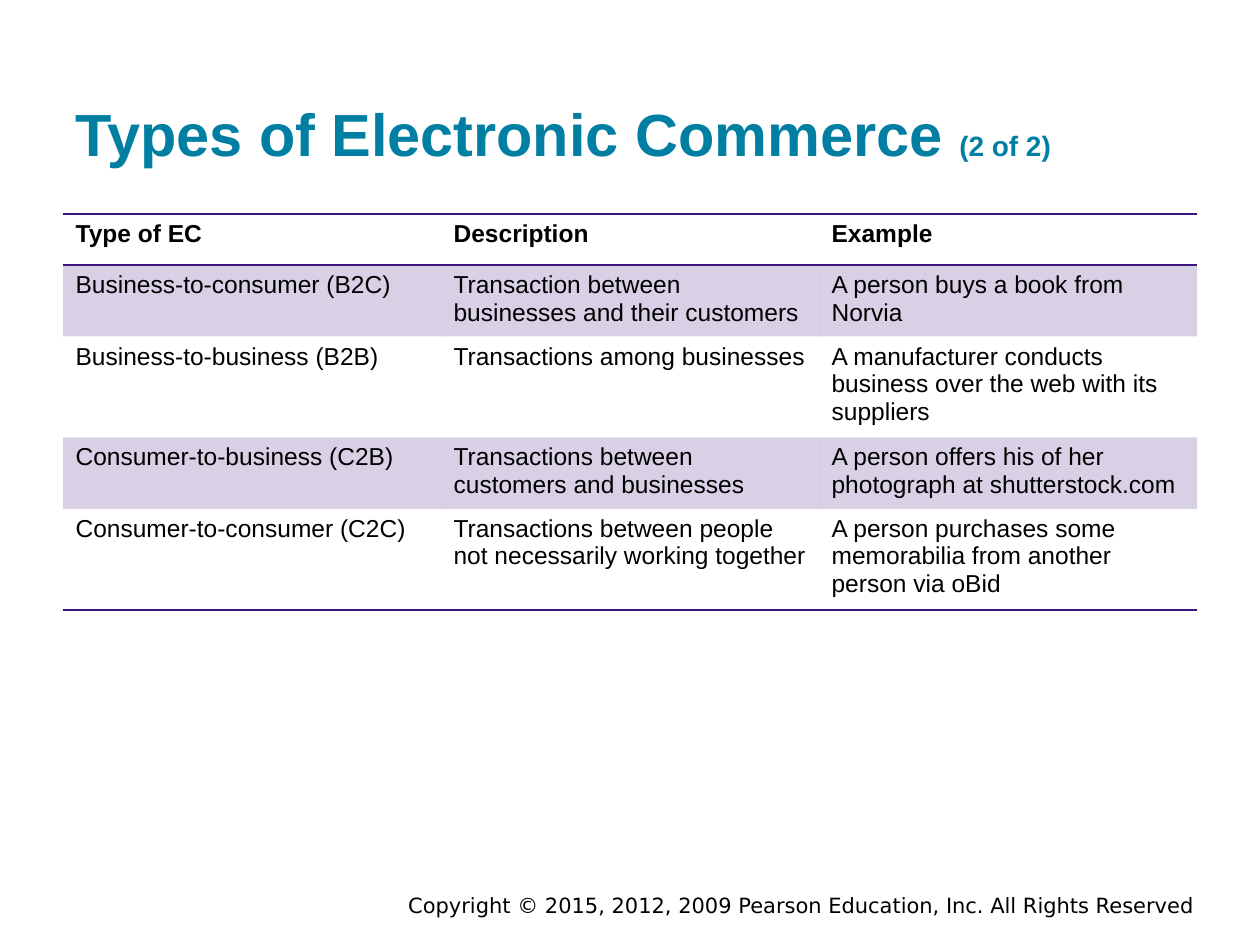
import pptx
import pptx.dml.color
import pptx.enum.text
import pptx.oxml
import pptx.oxml.ns
import pptx.util

RGBColor = pptx.dml.color.RGBColor
TEAL = RGBColor(0x00, 0x7F, 0xA3)
PURPLE = RGBColor(0x3C, 0x15, 0x81)
BLACK = RGBColor(0x00, 0x00, 0x00)

ALIGN = pptx.enum.text.PP_ALIGN
ANCHOR = pptx.enum.text.MSO_ANCHOR
NO_GRID_STYLE = "{2D5ABB26-0587-4C30-8999-92F81FD0307C}"

ROWS = [
    ("Type of EC", "Description", "Example"),
    ("Business-to-consumer (B2C)",
     "Transaction between businesses and their customers",
     "A person buys a book from Norvia"),
    ("Business-to-business (B2B)",
     "Transactions among businesses",
     "A manufacturer conducts business over the web with its suppliers"),
    ("Consumer-to-business (C2B)",
     "Transactions between customers and businesses",
     "A person offers his of her photograph at shutterstock.com"),
    ("Consumer-to-consumer (C2C)",
     "Transactions between people not necessarily working together",
     "A person purchases some memorabilia from another person via oBid"),
]
ROW_HEIGHTS = [51, 68, 95, 68, 95]


def px(length):
    return pptx.util.Emu(round(length * 914400 / 126))


class SlideBuilder:
    body_font = "Arial"
    footer_font = "DejaVu Sans"

    def __init__(self, slide):
        self.slide = slide

    def style(self, font, name, size, color, bold=False):
        font.name = name
        font.size = pptx.util.Pt(size)
        font.bold = bold
        font.color.rgb = color

    def text_box(self, left, top, width, height):
        box = self.slide.shapes.add_textbox(
            px(left), px(top), px(width), px(height))
        box.text_frame.word_wrap = True
        return box.text_frame

    def title(self, text, counter):
        frame = self.text_box(63, 30, 1134, 151)
        frame.margin_top = frame.margin_bottom = px(13)
        frame.vertical_anchor = ANCHOR.BOTTOM
        para = frame.paragraphs[0]
        self.style(para.font, self.body_font, 34, TEAL, bold=True)
        para.add_run().text = text
        span = para.add_run()
        span.text = counter
        span.font.size = pptx.util.Pt(16)

    def footer(self, text):
        para = self.text_box(220, 886, 987, 28).paragraphs[0]
        para.text = text
        para.alignment = ALIGN.RIGHT
        self.style(para.font, self.footer_font, 12, BLACK)

    def tint(self, cell, color, percent):
        cell.fill.solid()
        cell.fill.fore_color.rgb = color
        color_element = cell._tc.tcPr.find(".//" + pptx.oxml.ns.qn("a:srgbClr"))
        alpha = pptx.oxml.parse_xml(
            f'<a:alpha {pptx.oxml.ns.nsdecls("a")} val="{percent * 1000}"/>')
        color_element.append(alpha)

    def borders(self, cell, sides, color):
        for position, side in enumerate(sides):
            line = pptx.oxml.parse_xml(
                f'<a:ln{side} {pptx.oxml.ns.nsdecls("a")} w="12700">'
                f'<a:solidFill><a:srgbClr val="{color}"/></a:solidFill>'
                f'</a:ln{side}>')
            cell._tc.get_or_add_tcPr().insert(position, line)

    def table(self, rows, heights, left, top, width):
        frame = self.slide.shapes.add_table(
            len(rows), len(rows[0]),
            px(left), px(top), px(width), px(sum(heights)))
        table = frame.table
        table.first_row = table.horz_banding = False
        table._tbl.tblPr.find(pptx.oxml.ns.qn("a:tableStyleId")).text = NO_GRID_STYLE
        border_sides = {0: "TB", len(rows) - 1: "B"}
        for index, texts in enumerate(rows):
            table.rows[index].height = px(heights[index])
            for column, text in enumerate(texts):
                cell = table.cell(index, column)
                para = cell.text_frame.paragraphs[0]
                para.text = text
                self.style(para.font, self.body_font, 14, BLACK, bold=index == 0)
                if index % 2:
                    self.tint(cell, PURPLE, 20)
                else:
                    cell.fill.background()
                self.borders(cell, border_sides.get(index, ""), PURPLE)


def main():
    deck = pptx.Presentation()
    deck.slide_width = px(1260)
    deck.slide_height = px(945)
    page = SlideBuilder(deck.slides.add_slide(deck.slide_layouts[6]))
    page.footer("Copyright © 2015, 2012, 2009 Pearson Education, Inc. All Rights Reserved")
    page.title("Types of Electronic Commerce ", "(2 of 2)")
    page.table(ROWS, ROW_HEIGHTS, 63, 214, 1134)
    deck.save("out.pptx")


if __name__ == "__main__":
    main()
